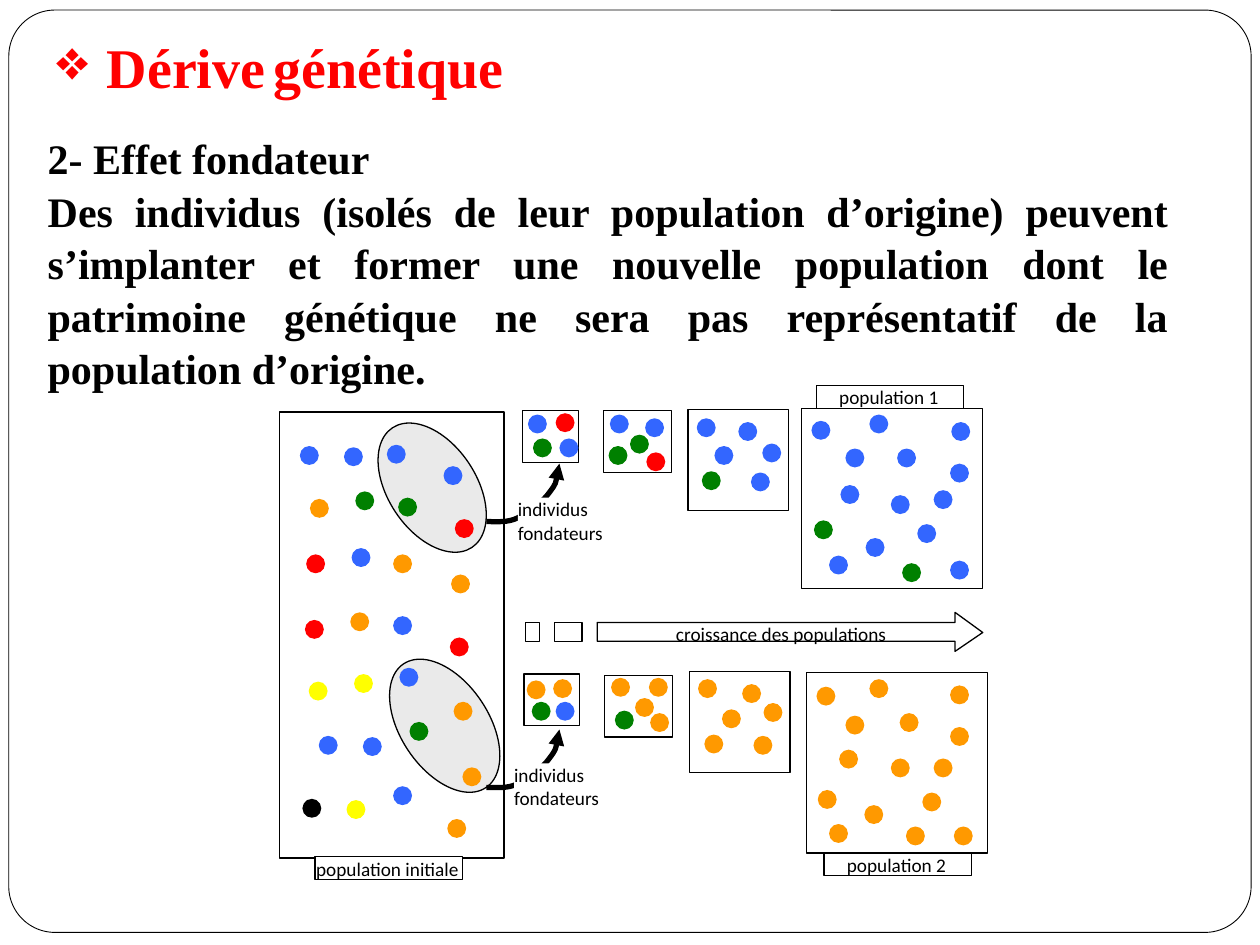
from lxml import etree
from pptx import Presentation
from pptx.dml import color
from pptx.enum import shapes, text
from pptx.oxml import ns
from pptx.util import Inches, Pt

BLACK, WHITE, GREY = "000000", "FFFFFF", "EAEAEA"
BLUE, RED, GREEN = "3366FF", "FF0000", "008000"
ORANGE, YELLOW = "FF9900", "FFFF00"
SERIF, SANS = "Times New Roman", "Calibri"
DOT = 0.15

# Dot positions, measured from the top left corner of each population's box
INITIAL = {
    BLUE: [(0.85, 0.26), (1.3, 0.43), (0.95, 2.03), (0.16, 0.27), (0.51, 0.28),
           (0.57, 1.08), (0.9, 1.62), (0.66, 2.58), (0.31, 2.57), (0.9, 2.97)],
    RED: [(1.39, 0.85), (0.2, 1.65), (1.35, 1.79), (0.21, 1.13)],
    GREEN: [(0.94, 0.68), (1.03, 2.46), (0.6, 0.63)],
    ORANGE: [(1.38, 2.3), (1.45, 2.82), (0.24, 0.69), (0.9, 1.13),
             (1.36, 1.29), (0.56, 1.59), (1.33, 3.23)],
    YELLOW: [(0.53, 3.08), (0.59, 2.08), (0.23, 2.14)],
    BLACK: [(0.18, 3.07)],
}
FOUNDER_GROUPS = [(0.86, 0.03, 0.7, 1.14), (0.96, 1.9, 0.7, 1.18)]

# Each generation: box, then its dots by colour
GENERATIONS = [
    ((4.15, 3.26, 0.44, 0.41), {
        BLUE: [(0.04, 0.03), (0.29, 0.22)], RED: [(0.26, 0.02)], GREEN: [(0.08, 0.22)]}),
    ((4.79, 3.26, 0.54, 0.49), {
        BLUE: [(0.05, 0.03), (0.33, 0.06)], RED: [(0.34, 0.33)],
        GREEN: [(0.04, 0.28), (0.21, 0.19)]}),
    ((5.46, 3.25, 0.8, 0.8), {
        BLUE: [(0.07, 0.07), (0.4, 0.1), (0.21, 0.29), (0.59, 0.27), (0.5, 0.5)],
        GREEN: [(0.11, 0.49)]}),
    ((6.36, 3.24, 1.44, 1.43), {
        BLUE: [(0.08, 0.1), (0.54, 0.05), (1.19, 0.11), (1.18, 0.44), (0.76, 0.32),
               (0.35, 0.32), (0.31, 0.61), (0.71, 0.69), (1.05, 0.65), (0.92, 0.92),
               (1.18, 1.21), (0.51, 1.03), (0.22, 1.17)],
        GREEN: [(0.1, 0.89), (0.8, 1.23)]}),
    ((4.16, 5.35, 0.44, 0.41), {
        BLUE: [(0.25, 0.22)], ORANGE: [(0.02, 0.05), (0.23, 0.04)], GREEN: [(0.06, 0.22)]}),
    ((4.8, 5.36, 0.54, 0.49), {
        GREEN: [(0.08, 0.28)],
        ORANGE: [(0.05, 0.02), (0.24, 0.18), (0.35, 0.02), (0.36, 0.3)]}),
    ((5.47, 5.33, 0.8, 0.8), {
        ORANGE: [(0.07, 0.06), (0.42, 0.1), (0.59, 0.25), (0.51, 0.51),
                 (0.26, 0.3), (0.12, 0.5)]}),
    ((6.4, 5.34, 1.44, 1.43), {
        ORANGE: [(0.08, 0.11), (0.5, 0.05), (0.31, 0.34), (0.74, 0.32), (1.14, 0.1),
                 (1.14, 0.43), (1.01, 0.68), (1.17, 1.22), (0.92, 0.95), (0.79, 1.22),
                 (0.46, 1.05), (0.18, 1.2), (0.09, 0.93), (0.26, 0.61), (0.67, 0.68)]}),
]


def rgb(value):
    return color.RGBColor.from_string(value)


def paint(shape, fill=WHITE, line=None, width=0.75):
    shape.shadow.inherit = False
    if fill:
        shape.fill.solid()
        shape.fill.fore_color.rgb = rgb(fill)
    else:
        shape.fill.background()
    if line:
        shape.line.color.rgb = rgb(line)
        shape.line.width = Pt(width)
    else:
        shape.line.fill.background()


def add_preset(slide, kind, box, **style):
    shape = slide.shapes.add_shape(kind, *map(Inches, box))
    paint(shape, **style)
    return shape


def style_span(span, size, font, fill=BLACK, bold=False):
    span.font.size, span.font.name, span.font.bold = Pt(size), font, bold
    span.font.color.rgb = rgb(fill)


def write_label(shape, words, align=text.PP_ALIGN.CENTER, left=0, top=0):
    frame = shape.text_frame
    frame.word_wrap = True
    frame.vertical_anchor = text.MSO_ANCHOR.TOP
    frame.margin_left, frame.margin_top = Inches(left), Inches(top)
    frame.margin_right, frame.margin_bottom = Inches(0.02), 0
    frame.text = words
    para = frame.paragraphs[0]
    para.alignment, para.space_after = align, Pt(10)
    style_span(para.runs[0], 11, SANS)


def add_outline(slide, left, top, contours, close):
    """Draw polygons whose points are measured from (left, top)."""
    builder = None
    for contour in contours:
        points = [(Inches(left + x), Inches(top + y)) for x, y in contour]
        if builder is None:
            builder = slide.shapes.build_freeform(*points[0])
        else:
            builder.move_to(*points[0])
        builder.add_line_segments(points[1:], close=close)
    return builder.convert_to_shape()


def add_title(slide, box):
    frame = slide.shapes.add_textbox(*map(Inches, box)).text_frame
    frame.word_wrap = True
    para = frame.paragraphs[0]
    for words, size, fill in (("Dérive", 32, RED), (" ", 18, BLACK), ("génétique", 32, RED)):
        span = para.add_run()
        span.text = words
        style_span(span, size, SERIF, fill, True)
    props = para._p.get_or_add_pPr()
    props.set("marL", str(Inches(0.4)))
    props.set("indent", str(-Inches(0.4)))
    etree.SubElement(props, ns.qn("a:buChar")).set("char", "❖")


def add_body(slide, box):
    frame = slide.shapes.add_textbox(*map(Inches, box)).text_frame
    frame.word_wrap = True
    frame.text = ("2- Effet fondateur\nDes individus (isolés de leur population d’origine) "
                  "peuvent s’implanter et former une nouvelle population dont le patrimoine "
                  "génétique ne sera pas représentatif de la population d’origine.")
    for para in frame.paragraphs:
        para.line_spacing = 1.04
        style_span(para.runs[0], 24, SERIF, bold=True)
    frame.paragraphs[1].alignment = text.PP_ALIGN.JUSTIFY


def add_population(slide, box, dots, groups=()):
    left, top = box[:2]
    add_preset(slide, shapes.MSO_SHAPE.RECTANGLE, box, line=BLACK)
    for x, y, width, height in groups:
        ellipse = add_preset(slide, shapes.MSO_SHAPE.OVAL, (left + x, top + y, width, height),
                             fill=GREY, line=BLACK)
        ellipse.rotation = 326.4
    for fill, places in dots.items():
        for x, y in places:
            add_preset(slide, shapes.MSO_SHAPE.OVAL, (left + x, top + y, DOT, DOT), fill=fill)


def add_growth_arrow(slide, left, top):
    bars = [[(x, 0.08), (x, 0.23), (end, 0.23), (end, 0.08)]
            for x, end in ((0.23, 0.45), (0, 0.11))]
    arrow = [(3.41, 0), (3.41, 0.08), (0.57, 0.08), (0.57, 0.23),
             (3.41, 0.23), (3.41, 0.31), (3.63, 0.16)]
    shape = add_outline(slide, left, top, [arrow] + bars, True)
    paint(shape, line=BLACK)
    write_label(shape, "croissance des populations", left=0.45, top=0.08)


def add_founders(slide, left, top, label_left):
    # Curved arrow: each three points after the start form one Bézier segment
    curve = [(0, 0.46), (0.08, 0.46), (0.17, 0.47), (0.25, 0.43), (0.34, 0.39),
             (0.45, 0.3), (0.5, 0.23), (0.56, 0.15), (0.57, 0.08), (0.58, 0)]
    shape = add_outline(slide, left, top, [curve], False)
    paint(shape, fill=None, line=BLACK, width=3)
    steps = list(shape._element.iter(ns.qn("a:lnTo")))
    for first in range(0, len(steps), 3):
        bezier = etree.Element(ns.qn("a:cubicBezTo"))
        steps[first].addprevious(bezier)
        for step in steps[first:first + 3]:
            bezier.append(step[0])
            step.getparent().remove(step)
    etree.SubElement(shape.line._get_or_add_ln(), ns.qn("a:tailEnd")).set("type", "triangle")
    label = add_preset(slide, shapes.MSO_SHAPE.RECTANGLE, (label_left, top + 0.27, 0.71, 0.33))
    write_label(label, "individus fondateurs", text.PP_ALIGN.LEFT)


def add_caption(slide, left, top, words):
    box = add_preset(slide, shapes.MSO_SHAPE.RECTANGLE, (left, top, 1.17, 0.18), line=BLACK)
    write_label(box, words)


def main():
    deck = Presentation()
    deck.slide_width, deck.slide_height = Inches(10), Inches(7.5)
    slide = deck.slides.add_slide(deck.slide_layouts[6])

    # Frame and text
    frame = add_preset(slide, shapes.MSO_SHAPE.ROUNDED_RECTANGLE, (0.07, 0.08, 9.86, 7.32),
                       line=BLACK, width=0.5)
    frame.adjustments[0] = 0.05
    add_body(slide, (0.28, 0.99, 9.09, 2.12))
    add_title(slide, (0.35, 0.21, 3.84, 0.64))

    # Populations
    add_population(slide, (2.22, 3.27, 1.78, 3.54), INITIAL, FOUNDER_GROUPS)
    for box, dots in GENERATIONS:
        add_population(slide, box, dots)

    # Arrows and captions
    add_growth_arrow(slide, 4.17, 4.86)
    add_founders(slide, 3.86, 5.79, 4.08)
    add_founders(slide, 3.86, 3.68, 4.11)
    for left, top, words in ((2.5, 6.8, "population initiale"), (6.54, 6.77, "population 2"),
                             (6.48, 3.06, "population 1")):
        add_caption(slide, left, top, words)
    deck.save("out.pptx")


if __name__ == "__main__":
    main()
